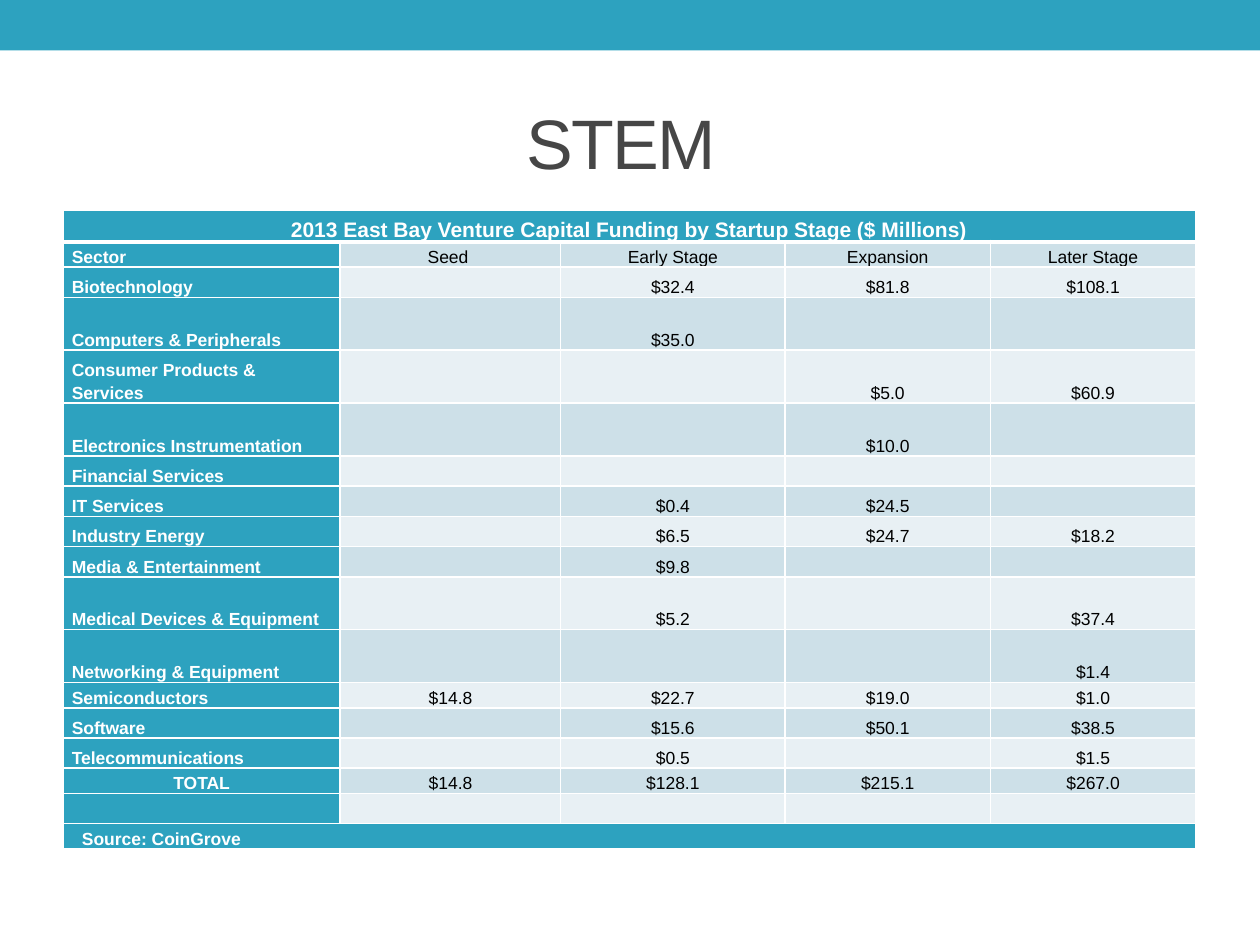
from dataclasses import dataclass

from lxml import etree
from pptx import Presentation
from pptx.dml.color import RGBColor
from pptx.enum.shapes import MSO_SHAPE
from pptx.enum.text import MSO_ANCHOR, PP_ALIGN
from pptx.oxml import parse_xml
from pptx.oxml.ns import nsdecls, qn
from pptx.util import Inches, Pt

RECTANGLE = MSO_SHAPE.RECTANGLE
BOTTOM, MIDDLE = MSO_ANCHOR.BOTTOM, MSO_ANCHOR.MIDDLE
LEFT, CENTER, JUSTIFY = PP_ALIGN.LEFT, PP_ALIGN.CENTER, PP_ALIGN.JUSTIFY
TITLE_ONLY = 5


@dataclass(frozen=True)
class Theme:
    font: str = "Arial"
    accent: str = "2DA2BF"
    title: str = "464646"
    body: str = "000000"
    light: str = "FFFFFF"
    bands: tuple = ("CDE0E8", "E8F0F4")
    title_size: int = 40
    caption_size: int = 12
    cell_size: int = 10


@dataclass(frozen=True)
class Box:
    left: float
    top: float
    width: float
    height: float

    def emu(self):
        return [Inches(n) for n in (self.left, self.top, self.width, self.height)]


THEME = Theme()
SLIDE_WIDTH, SLIDE_HEIGHT = 10, 7.5
BAR_BOX = Box(0, 0, SLIDE_WIDTH, 0.4)
TITLE_BOX = Box(0.5, 0.58, 9, 1.08)
TABLE_BOX = Box(0.5, 1.67, 8.99, 5.07)

# Column and row sizes are weights that share out the table's box.
COLUMN_WEIGHTS = (2.2, 1.75, 1.78, 1.63, 1.63)
CAPTION, SHORT, NORMAL, TALL = 25, 20, 24, 42

TABLE_CAPTION = "2013 East Bay Venture Capital Funding by Startup Stage ($ Millions)"
SOURCE = "Source: CoinGrove"
FUNDING = (
    (SHORT, "Sector", "Seed ", "Early Stage", "Expansion", "Later Stage"),
    (NORMAL, "Biotechnology", "", "$32.4", "$81.8", "$108.1"),
    (TALL, "Computers & Peripherals", "", "$35.0", "", ""),
    (TALL, "Consumer Products & Services", "", "", "$5.0", "$60.9"),
    (TALL, "Electronics Instrumentation", "", "", "$10.0", ""),
    (NORMAL, "Financial Services", "", "", "", ""),
    (NORMAL, "IT Services", "", "$0.4", "$24.5", ""),
    (NORMAL, "Industry Energy", "", "$6.5", "$24.7", "$18.2"),
    (NORMAL, "Media & Entertainment", "", "$9.8", "", ""),
    (TALL, "Medical Devices & Equipment", "", "$5.2", "", "$37.4"),
    (TALL, "Networking & Equipment", "", "", "", "$1.4"),
    (SHORT, "Semiconductors", "$14.8", "$22.7", "$19.0", "$1.0"),
    (NORMAL, "Software", "", "$15.6", "$50.1", "$38.5"),
    (NORMAL, "Telecommunications", "", "$0.5", "", "$1.5"),
    (SHORT, "TOTAL", "$14.8", "$128.1", "$215.1", "$267.0"),
    (NORMAL, "", "", "", "", ""),
)


def write_text(frame, text, *, size=THEME.cell_size, color=THEME.body, bold=False,
               align=LEFT, line_spacing=None, tracking=None):
    paragraph = frame.paragraphs[0]
    paragraph.alignment = align
    paragraph.line_spacing = line_spacing
    if not text:
        # The end mark keeps an empty cell from growing to the default text size.
        etree.SubElement(paragraph._p, qn("a:endParaRPr"), sz=str(size * 100))
        return
    run = paragraph.add_run()
    run.text = text
    run.font.name = THEME.font
    run.font.size = Pt(size)
    run.font.bold = bold
    run.font.color.rgb = RGBColor.from_string(color)
    if tracking is not None:
        run._r.get_or_add_rPr().set("spc", str(tracking * 100))


def set_borders(cell, bottom=1):
    properties = cell._tc.get_or_add_tcPr()
    for side, points in (("L", 1), ("R", 1), ("T", 1), ("B", bottom)):
        properties.append(parse_xml(
            f'<a:ln{side} {nsdecls("a")} w="{Pt(points)}"><a:solidFill>'
            f'<a:srgbClr val="{THEME.light}"/></a:solidFill></a:ln{side}>'))


def format_cell(cell, text, fill, *, bottom=1, indent=0, **text_format):
    set_borders(cell, bottom)
    cell.fill.solid()
    cell.fill.fore_color.rgb = RGBColor.from_string(fill)
    cell.vertical_anchor = BOTTOM
    cell.margin_left = Inches(0.07 + indent)
    cell.margin_right = Inches(0.07)
    cell.margin_top = cell.margin_bottom = 0
    write_text(cell.text_frame, text, line_spacing=1.15, **text_format)


def format_spanning_row(table, row, text, **cell_format):
    cells = list(table.rows[row].cells)
    cells[0].merge(cells[-1])
    for column, cell in enumerate(cells):
        format_cell(cell, "" if column else text, THEME.accent,
                    color=THEME.light, bold=True, **cell_format)


def add_top_bar(slide, box):
    bar = slide.shapes.add_shape(RECTANGLE, *box.emu())
    bar.shadow.inherit = False
    bar.fill.solid()
    bar.fill.fore_color.rgb = RGBColor.from_string(THEME.accent)
    bar.line.fill.background()


def place_title(slide, box, text):
    title = slide.shapes.title
    title.left, title.top, title.width, title.height = box.emu()
    title.text_frame.vertical_anchor = MIDDLE
    write_text(title.text_frame, text, size=THEME.title_size, color=THEME.title,
               align=CENTER, tracking=-1)


def add_funding_table(slide, box):
    heights = [CAPTION, *(row[0] for row in FUNDING), SHORT]
    table = slide.shapes.add_table(len(heights), len(COLUMN_WEIGHTS), *box.emu()).table
    table.first_row = table.horz_banding = False
    for column, weight in zip(table.columns, COLUMN_WEIGHTS):
        column.width = Inches(box.width * weight / sum(COLUMN_WEIGHTS))
    for row, weight in zip(table.rows, heights):
        row.height = Inches(box.height * weight / sum(heights))

    format_spanning_row(table, 0, TABLE_CAPTION, bottom=3,
                        size=THEME.caption_size, align=CENTER)
    for index, (_, sector, *amounts) in enumerate(FUNDING):
        sector_cell, *amount_cells = table.rows[index + 1].cells
        format_cell(sector_cell, sector, THEME.accent, color=THEME.light, bold=True,
                    align=CENTER if sector == "TOTAL" else LEFT)
        for cell, amount in zip(amount_cells, amounts):
            format_cell(cell, amount, THEME.bands[index % 2], align=CENTER)
    format_spanning_row(table, len(heights) - 1, SOURCE, indent=0.08, align=JUSTIFY)


def main():
    presentation = Presentation()
    presentation.slide_width = Inches(SLIDE_WIDTH)
    presentation.slide_height = Inches(SLIDE_HEIGHT)
    slide = presentation.slides.add_slide(presentation.slide_layouts[TITLE_ONLY])
    add_top_bar(slide, BAR_BOX)
    place_title(slide, TITLE_BOX, "STEM ")
    add_funding_table(slide, TABLE_BOX)
    presentation.save("out.pptx")


if __name__ == "__main__":
    main()
